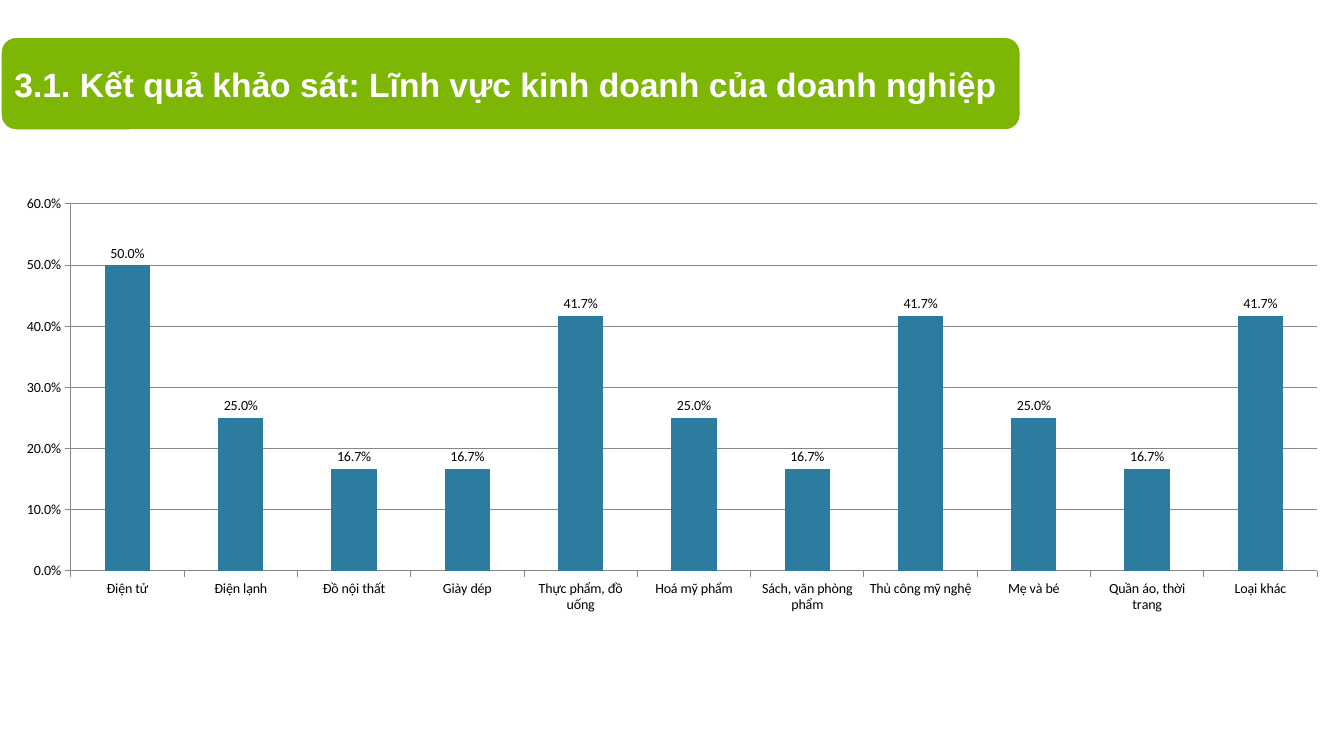
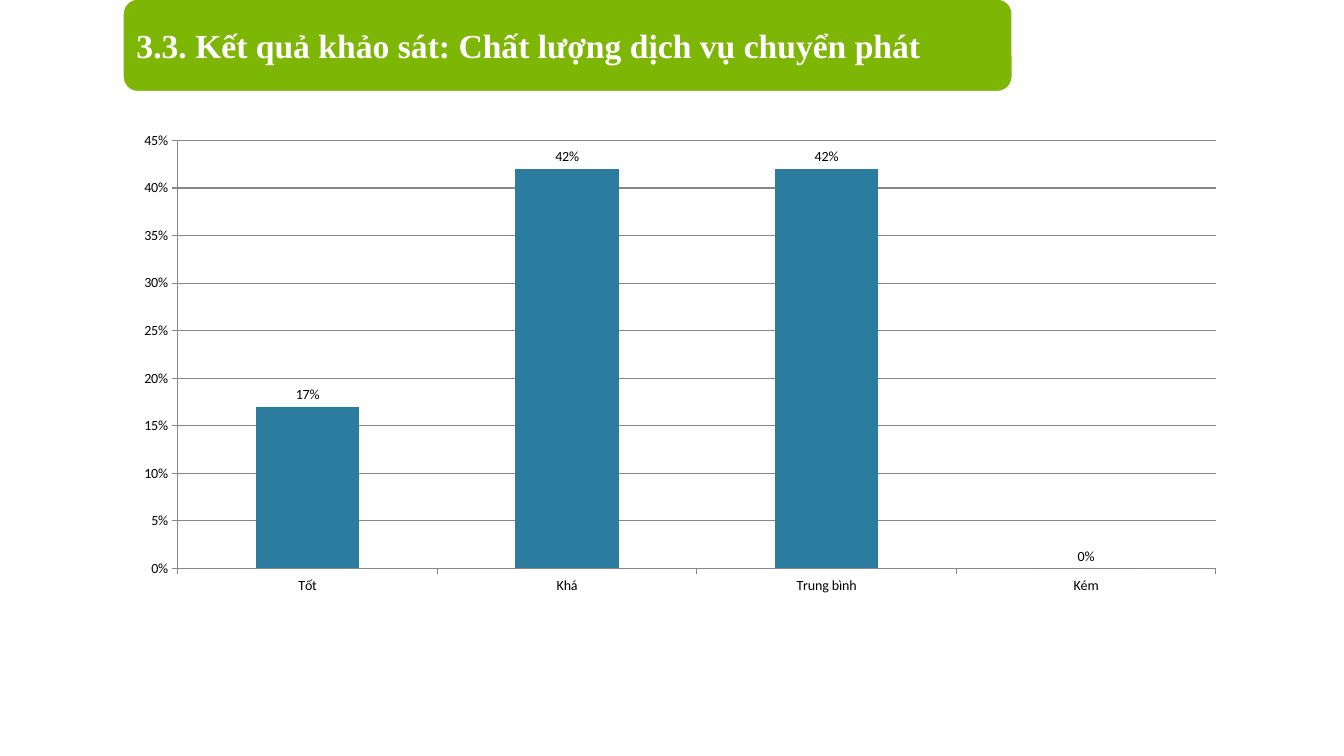
from dataclasses import dataclass

from pptx import Presentation
from pptx import util as u
from pptx.chart import data as chart_data
from pptx.dml import color
from pptx.enum import chart as chart_enum
from pptx.enum import shapes, text


@dataclass(frozen=True)
class Theme:
    band: color.RGBColor = color.RGBColor(0x7E, 0xB6, 0x06)
    paper: color.RGBColor = color.RGBColor(0xFF, 0xFF, 0xFF)
    column: color.RGBColor = color.RGBColor(0x2C, 0x7C, 0x9F)
    rule: color.RGBColor = color.RGBColor(0x87, 0x87, 0x87)
    ink: color.RGBColor = color.RGBColor(0, 0, 0)
    chart_font: str = "Calibri"
    title_size: u.Pt = u.Pt(24)
    chart_size: u.Pt = u.Pt(10)
    band_line: u.Pt = u.Pt(2.5)
    axis_line: u.Pt = u.Pt(0.75)


theme = Theme()
presentation = Presentation()
presentation.slide_width = u.Inches(13.33)
presentation.slide_height = u.Inches(7.5)
BAND_HEIGHT = 0.94

surveys = [
    {
        "title": "3.1. Kết quả khảo sát: Lĩnh vực kinh doanh của doanh nghiệp",
        "font": "Arial",
        "band": (0, 0.36, 10.13, BAND_HEIGHT),
        "chart": (0, 1.86, 13.33, 4.3),
        "format": "0.0%",
        "top": 0.6,
        "step": 0.1,
        "answers": {
            "Điện tử": 0.5,
            "Điện lạnh": 0.25,
            "Đồ nội thất": 0.167,
            "Giày dép": 0.167,
            "Thực phẩm, đồ uống": 0.417,
            "Hoá mỹ phẩm": 0.25,
            "Sách, văn phòng phẩm": 0.167,
            "Thủ công mỹ nghệ": 0.417,
            "Mẹ và bé": 0.25,
            "Quần áo, thời trang": 0.167,
            "Loại khác": 0.417,
        },
    },
    {
        "title": "3.3. Kết quả khảo sát: Chất lượng dịch vụ chuyển phát",
        "font": "Times New Roman",
        "band": (1.21, -0.02, 8.84, BAND_HEIGHT),
        "chart": (1.21, 1.22, 11.07, 4.77),
        "format": "0%",
        "top": 0.45,
        "step": 0.05,
        "answers": {"Tốt": 0.17, "Khá": 0.42, "Trung bình": 0.42, "Kém": 0},
    },
]

for survey in surveys:
    slide = presentation.slides.add_slide(presentation.slide_layouts[6])

    band = slide.shapes.add_shape(
        shapes.MSO_SHAPE.ROUNDED_RECTANGLE, *map(u.Inches, survey["band"])
    )
    band.shadow.inherit = False
    band.fill.solid()
    band.fill.fore_color.rgb = theme.band
    band.line.color.rgb = theme.paper
    band.line.width = theme.band_line
    band.text_frame.word_wrap = True
    band.text_frame.vertical_anchor = text.MSO_ANCHOR.MIDDLE
    paragraph = band.text_frame.paragraphs[0]
    paragraph.alignment = text.PP_ALIGN.LEFT
    run = paragraph.add_run()
    run.text = survey["title"]
    run.font.name = survey["font"]
    run.font.size = theme.title_size
    run.font.bold = True
    run.font.color.rgb = theme.paper

    answers = chart_data.CategoryChartData(number_format=survey["format"])
    answers.categories = survey["answers"].keys()
    answers.add_series("Series 1", survey["answers"].values())
    chart = slide.shapes.add_chart(
        chart_enum.XL_CHART_TYPE.COLUMN_CLUSTERED,
        *map(u.Inches, survey["chart"]),
        answers,
    ).chart
    chart.has_title = False
    chart.has_legend = False
    chart.font.name = theme.chart_font
    chart.font.size = theme.chart_size
    chart.font.color.rgb = theme.ink

    plot = chart.plots[0]
    plot.gap_width = 150
    plot.vary_by_categories = False
    plot.has_data_labels = True
    labels = plot.data_labels
    labels.show_value = True
    labels.number_format = survey["format"]
    labels.number_format_is_linked = False
    labels.position = chart_enum.XL_LABEL_POSITION.OUTSIDE_END
    columns = plot.series[0].format.fill
    columns.solid()
    columns.fore_color.rgb = theme.column

    value_axis = chart.value_axis
    value_axis.minimum_scale = 0
    value_axis.maximum_scale = survey["top"]
    value_axis.major_unit = survey["step"]
    value_axis.has_major_gridlines = True
    value_axis.tick_labels.number_format = survey["format"]
    value_axis.tick_labels.number_format_is_linked = False
    for axis in (chart.category_axis, value_axis):
        axis.major_tick_mark = chart_enum.XL_TICK_MARK.OUTSIDE
    for ruled in (chart.category_axis, value_axis, value_axis.major_gridlines):
        ruled.format.line.color.rgb = theme.rule
        ruled.format.line.width = theme.axis_line

presentation.save("out.pptx")
